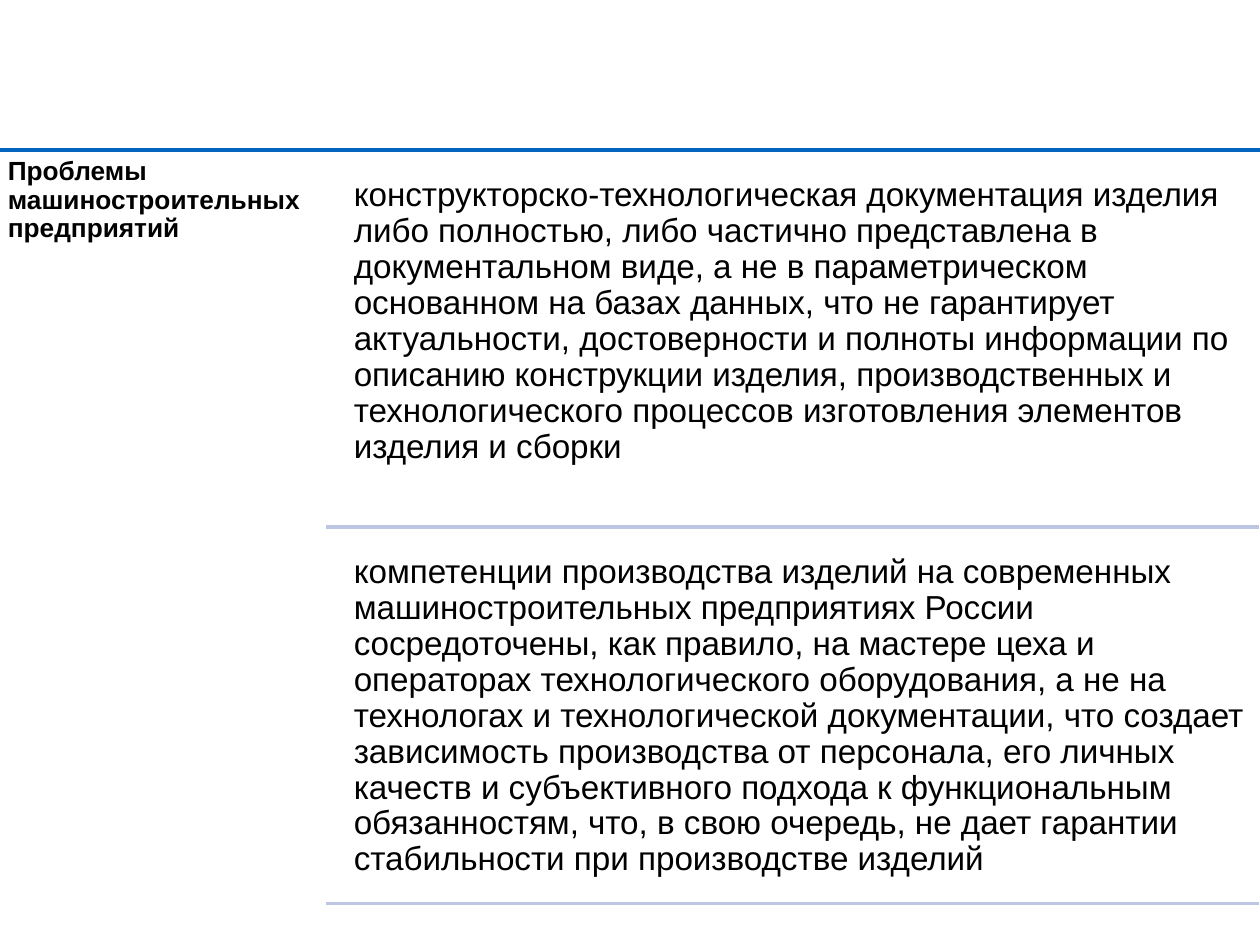
"""Build a slide listing the problems of machine-building enterprises."""
from dataclasses import dataclass

import pptx
import pptx.dml.color
import pptx.enum.shapes
import pptx.enum.text
import pptx.oxml.ns
import pptx.util
from lxml import etree
from pptx.util import Pt


@dataclass(frozen=True)
class Theme:
    """Colours, font and type sizes of the slide."""

    text: str = "000000"
    header_rule: str = "0365C0"
    row_rule: str = "BDC6E2"
    font: str = "Arial"
    heading_size: float = 15
    body_size: float = 19
    rule_width: float = 2


THEME = Theme()
SLIDE_WIDTH, SLIDE_HEIGHT = 720, 540
HEADER_TOP = 85.8
HEADING_WIDTH = 186.5
BODY_LEFT = 196.5
BODY_HEIGHT = 205
ROW_GAP = 10.3
HEADING = "Проблемы машиностроительных предприятий"
PROBLEMS = (
    "конструкторско-технологическая документация изделия либо полностью, "
    "либо частично представлена в документальном виде, а не в параметрическом "
    "основанном на базах данных, что не гарантирует актуальности, достоверности "
    "и полноты информации по описанию конструкции изделия, производственных и "
    "технологического процессов изготовления элементов изделия и сборки",
    "компетенции производства изделий на современных машиностроительных "
    "предприятиях России сосредоточены, как правило, на мастере цеха и "
    "операторах технологического оборудования, а не на технологах и "
    "технологической документации, что создает зависимость производства от "
    "персонала, его личных качеств и субъективного подхода к функциональным "
    "обязанностям, что, в свою очередь, не дает гарантии стабильности при "
    "производстве изделий",
)


def add_rule(slide, left, right, top, color):
    """Draw a horizontal rule without a shadow."""
    rule = slide.shapes.add_connector(
        pptx.enum.shapes.MSO_CONNECTOR.STRAIGHT, Pt(left), Pt(top), Pt(right), Pt(top)
    )
    rule.line.color.rgb = pptx.dml.color.RGBColor.from_string(color)
    rule.line.width = Pt(THEME.rule_width)
    etree.SubElement(rule.element.spPr, pptx.oxml.ns.qn("a:effectLst"))


def add_text(slide, text, left, top, width, height, size, margin, bold=False):
    """Add a wrapped, top-anchored text box with equal margins."""
    box = slide.shapes.add_textbox(Pt(left), Pt(top), Pt(width), Pt(height))
    frame = box.text_frame
    frame.text = text
    frame.word_wrap = True
    frame.vertical_anchor = pptx.enum.text.MSO_ANCHOR.TOP
    frame.margin_left = frame.margin_right = Pt(margin)
    frame.margin_top = frame.margin_bottom = Pt(margin)
    paragraph = frame.paragraphs[0]
    paragraph.line_spacing = 0.9
    font = paragraph.runs[0].font
    font.name = THEME.font
    font.size = Pt(size)
    font.bold = bold
    font.color.rgb = pptx.dml.color.RGBColor.from_string(THEME.text)


def add_problem(slide, text, top):
    """Add one problem with the rule that closes its row."""
    add_text(slide, text, BODY_LEFT, top, SLIDE_WIDTH - BODY_LEFT, BODY_HEIGHT,
             THEME.body_size, 5.7)
    add_rule(slide, HEADING_WIDTH, 719.5, top + BODY_HEIGHT, THEME.row_rule)


def main():
    """Build and save the slide."""
    presentation = pptx.Presentation()
    presentation.slide_width = Pt(SLIDE_WIDTH)
    presentation.slide_height = Pt(SLIDE_HEIGHT)
    slide = presentation.slides.add_slide(presentation.slide_layouts[6])
    add_rule(slide, 0, SLIDE_WIDTH, HEADER_TOP, THEME.header_rule)
    add_text(slide, HEADING, 0, HEADER_TOP, HEADING_WIDTH, 440.5,
             THEME.heading_size, 4.5, bold=True)
    for index, problem in enumerate(PROBLEMS):
        row_top = HEADER_TOP + ROW_GAP + index * (BODY_HEIGHT + ROW_GAP)
        add_problem(slide, problem, row_top)
    presentation.save("out.pptx")


if __name__ == "__main__":
    main()
